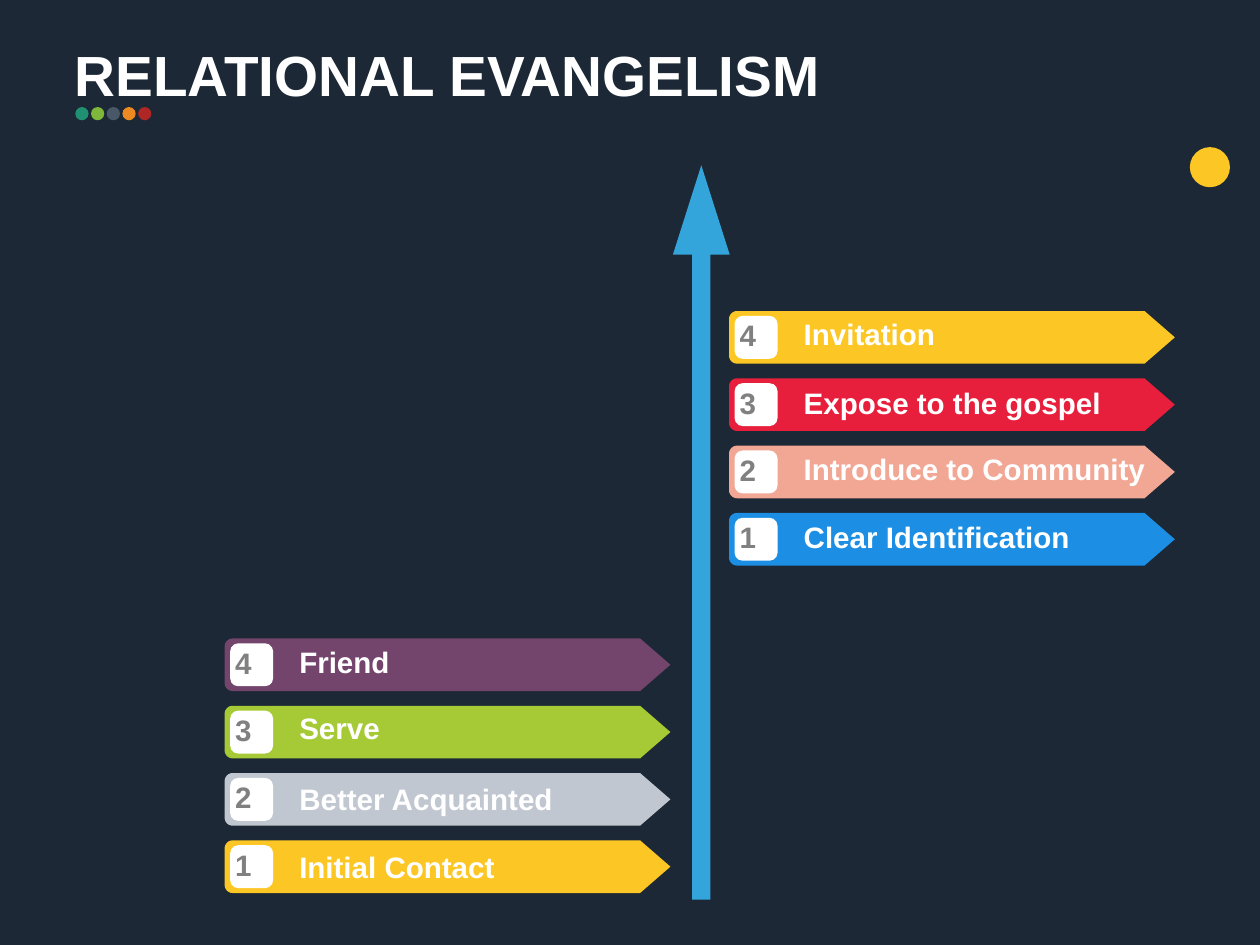
from math import cos, pi, sin

from pptx import Presentation
from pptx.dml.color import RGBColor
from pptx.enum.shapes import MSO_SHAPE
from pptx.enum.text import MSO_ANCHOR, MSO_AUTO_SIZE, PP_ALIGN
from pptx.util import Cm, Pt

NAVY = RGBColor(0x1C, 0x28, 0x35)
WHITE = RGBColor(0xFF, 0xFF, 0xFF)
GREY = RGBColor(0x80, 0x80, 0x80)
YELLOW = RGBColor(0xFC, 0xC7, 0x25)
RED = RGBColor(0xE7, 0x1F, 0x3C)
SALMON = RGBColor(0xF2, 0xA6, 0x94)
BLUE = RGBColor(0x1C, 0x8E, 0xE4)
PURPLE = RGBColor(0x73, 0x44, 0x6C)
LIME = RGBColor(0xA5, 0xCA, 0x36)
SILVER = RGBColor(0xC1, 0xC7, 0xD0)
SKY = RGBColor(0x34, 0xA5, 0xDA)
TEAL = RGBColor(0x20, 0x90, 0x72)
GREEN = RGBColor(0x7E, 0xB7, 0x39)
SLATE = RGBColor(0x48, 0x58, 0x68)
ORANGE = RGBColor(0xEC, 0x89, 0x21)
BRICK = RGBColor(0xAE, 0x27, 0x24)

# Ribbon measures in cm
RIBBON_WIDTH, RIBBON_BODY, RIBBON_HEIGHT = 12.78, 11.91, 1.51
RIBBON_PITCH = 1.93
CORNER = 0.23
TILE = 1.23

# Label, colour and drop of the label below the ribbon's top, from 4 down to 1
GOSPEL_STEPS = [
    ("Invitation", YELLOW, 0.15),
    ("Expose to the gospel", RED, 0.2),
    ("Introduce to Community", SALMON, 0.15),
    ("Clear Identification", BLUE, 0.18),
]
FRIENDSHIP_STEPS = [
    ("Friend", PURPLE, 0.15),
    ("Serve", LIME, 0.13),
    ("Better Acquainted", SILVER, 0.23),
    ("Initial Contact", YELLOW, 0.26),
]


class SlideBuilder:
    font = "Arial"
    step_size = 24
    title_size = 46

    def __init__(self, slide):
        self.slide = slide
        slide.background.fill.solid()
        slide.background.fill.fore_color.rgb = NAVY

    def paint(self, shape, color):
        shape.shadow.inherit = False
        shape.fill.solid()
        shape.fill.fore_color.rgb = color
        shape.line.fill.background()

    def set_text(self, frame, text, size, color, inset=0):
        frame.margin_left = frame.margin_right = Cm(inset)
        frame.margin_top = frame.margin_bottom = Cm(inset)
        frame.vertical_anchor = MSO_ANCHOR.TOP
        frame.auto_size = MSO_AUTO_SIZE.NONE
        paragraph = frame.paragraphs[0]
        paragraph.alignment = PP_ALIGN.LEFT
        run = paragraph.add_run()
        run.text = text
        run.font.name = self.font
        run.font.size = Pt(size)
        run.font.bold = True
        run.font.color.rgb = color

    def title(self, text, left, top, width, height):
        heading = self.slide.shapes.title
        heading.left, heading.top = Cm(left), Cm(top)
        heading.width, heading.height = Cm(width), Cm(height)
        self.set_text(heading.text_frame, text, self.title_size, WHITE, 0.08)
        heading.text_frame.word_wrap = False

    def preset(self, shapes, kind, left, top, width, height, color, adjustments=()):
        shape = shapes.add_shape(kind, Cm(left), Cm(top), Cm(width), Cm(height))
        for index, value in enumerate(adjustments):
            shape.adjustments[index] = value
        self.paint(shape, color)

    def dot(self, left, top, diameter, color):
        self.preset(self.slide.shapes, MSO_SHAPE.OVAL, left, top, diameter, diameter, color)

    def label(self, shapes, text, left, top, width, color):
        box = shapes.add_textbox(Cm(left), Cm(top), Cm(width), Cm(0.97))
        box.text_frame.word_wrap = True
        self.set_text(box.text_frame, text, self.step_size, color)

    def ribbon(self, shapes, left, top, color):
        """Pointed on the right, with rounded corners on the left."""
        bottom = top + RIBBON_HEIGHT
        corners = [
            (left + CORNER + CORNER * cos(angle), center + CORNER * sin(angle))
            for center, start in ((bottom - CORNER, pi / 2), (top + CORNER, pi))
            for angle in (start + step * pi / 12 for step in range(7))
        ]
        points = [
            (left + RIBBON_BODY, top),
            (left + RIBBON_WIDTH, top + RIBBON_HEIGHT / 2),
            (left + RIBBON_BODY, bottom),
            *corners,
        ]
        outline = [(Cm(x), Cm(y)) for x, y in points]
        builder = shapes.build_freeform(*outline[0])
        builder.add_line_segments(outline[1:], close=True)
        self.paint(builder.convert_to_shape(), color)

    def step(self, number, text, left, top, color, drop):
        shapes = self.slide.shapes.add_group_shape().shapes
        self.ribbon(shapes, left, top, color)
        self.preset(shapes, MSO_SHAPE.ROUNDED_RECTANGLE, left + 0.16, top + 0.14,
                    TILE, TILE, WHITE, [0.185])
        self.label(shapes, text, left + 2.14, top + drop, 10, WHITE)
        self.label(shapes, str(number), left + 0.3, top + 0.18, 0.9, GREY)

    def staircase(self, steps, left, top):
        for row, (text, color, drop) in enumerate(steps):
            self.step(len(steps) - row, text, left, top + row * RIBBON_PITCH, color, drop)


def main():
    deck = Presentation()
    deck.slide_width, deck.slide_height = Cm(36.12), Cm(27.1)
    page = SlideBuilder(deck.slides.add_slide(deck.slide_layouts[5]))

    # Heading with its row of dots, and the corner dot
    page.title("RELATIONAL EVANGELISM", 2.06, 1.07, 21.54, 2.08)
    for column, color in enumerate((TEAL, GREEN, SLATE, ORANGE, BRICK)):
        page.dot(2.16 + column * 0.45, 3.07, 0.38, color)
    page.dot(34.11, 4.22, 1.15, YELLOW)

    # Steps on both sides of the arrow
    page.staircase(GOSPEL_STEPS, 20.9, 8.92)
    page.staircase(FRIENDSHIP_STEPS, 6.44, 18.31)

    # Upward arrow
    page.preset(page.slide.shapes, MSO_SHAPE.UP_ARROW, 19.29, 4.74, 1.63, 21.06,
                SKY, [0.32, 1.574])

    deck.save("out.pptx")


if __name__ == "__main__":
    main()
